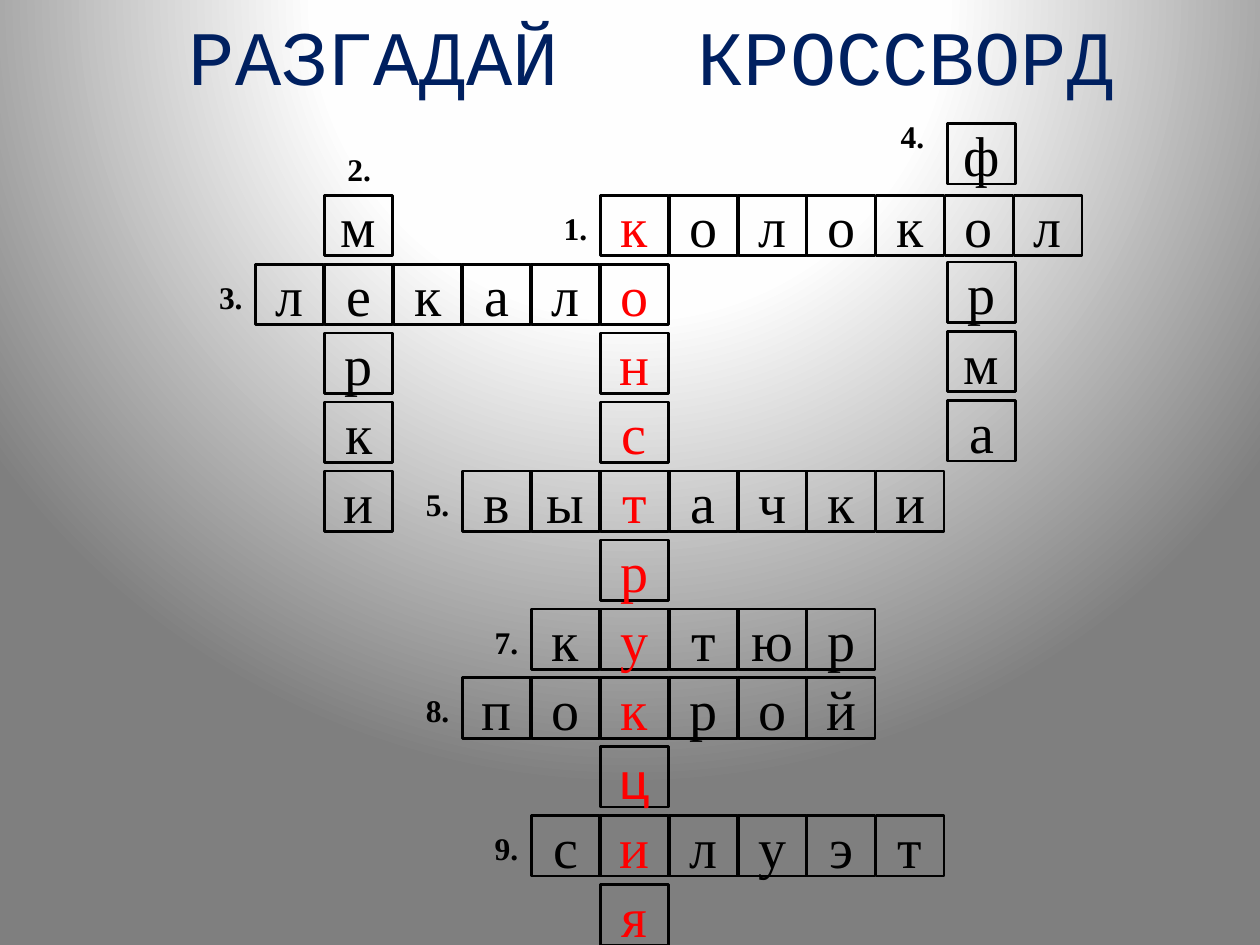
"""Build a crossword slide with a title, lettered cells and clue numbers."""
from pptx import Presentation, oxml, util as u
from pptx.dml.color import RGBColor
from pptx.enum import shapes, text

SERIF = "Times New Roman"
CELL_W, CELL_H = 0.54, 0.48
LEFT, TOP, PITCH = 2.03, 1.55, 5.47 / 10
KEYWORD, KEY_COL = "конструкция", 5
ACROSS = [
    ("1.", "колокол", 5, 0),
    ("3.", "лекало", 0, 1),
    ("5.", "вытачки", 3, 4),
    ("7.", "кутюр", 4, 6),
    ("8.", "покрой", 3, 7),
    ("9.", "силуэт", 4, 9),
]


def style(p, size, color, font=SERIF, bold=False):
    p.font.size = u.Pt(size)
    p.font.name = font
    p.font.bold = bold
    p.font.color.rgb = RGBColor.from_string(color)


def add_box(x, y, w, h):
    sp = s.shapes.add_textbox(u.Inches(x), u.Inches(y), u.Inches(w), u.Inches(h))
    sp.text_frame.word_wrap = True
    return sp.text_frame


prs = Presentation()
prs.slide_width, prs.slide_height = u.Inches(10), u.Inches(7.5)
s = prs.slides.add_slide(prs.slide_layouts[6])

s.background.fill.solid()
bg = s._element.cSld.bg.bgPr
stops = "".join(
    f'<a:gs pos="{pos * 1000}"><a:srgbClr val="{color}"/></a:gs>'
    for pos, color in [(0, "FFFFFF"), (40, "FEFEFE"), (100, "7F7F7F")]
)
bg.replace(bg[0], oxml.parse_xml(
    '<a:gradFill xmlns:a="http://schemas.openxmlformats.org/drawingml/2006/main" '
    f'rotWithShape="1"><a:gsLst>{stops}</a:gsLst><a:path path="circle">'
    '<a:fillToRect l="50000" t="-80000" r="50000" b="180000"/></a:path></a:gradFill>'
))

tf = add_box(0.67, 0, 9, 0.87)
tf.vertical_anchor = text.MSO_ANCHOR.MIDDLE
p = tf.paragraphs[0]
p.alignment = text.PP_ALIGN.CENTER
style(p, 44, "002060", "Courier New")
for part in ("РАЗГАДАЙ", " ", "КРОССВОРД"):
    r = p.add_run()
    r.text = part
    if part == " ":
        r._r.get_or_add_rPr().set("spc", "5280")

letters = {}
for number, word, col, row in ACROSS:
    for i, letter in enumerate(word):
        letters[col + i, row] = letter
for row, letter in enumerate("мерки"):
    letters[1, row] = letter
for row, letter in enumerate(KEYWORD):
    letters[KEY_COL, row] = letter

cells = [
    (LEFT + col * PITCH, TOP + row * PITCH, letter, "FF0000" if col == KEY_COL else "000000")
    for (col, row), letter in letters.items()
]
cells += [(7.52, 0.98 + i * 0.55, letter, "000000")
          for i, letter in enumerate("форма") if i != 1]

for x, y, letter, color in cells:
    sp = s.shapes.add_shape(shapes.MSO_SHAPE.RECTANGLE, u.Inches(x), u.Inches(y),
                            u.Inches(CELL_W), u.Inches(CELL_H))
    sp.shadow.inherit = False
    sp.fill.background()
    sp.line.color.rgb = RGBColor.from_string("000000")
    sp.line.width = u.Pt(1.5)
    tf = sp.text_frame
    tf.vertical_anchor = text.MSO_ANCHOR.MIDDLE
    p = tf.paragraphs[0]
    p.text = letter
    p.alignment = text.PP_ALIGN.CENTER
    style(p, 32, color, "Calibri" if letter == "ц" else SERIF)

numbers = [(number, LEFT + col * PITCH - 0.39, TOP + row * PITCH + 0.06)
           for number, word, col, row in ACROSS]
numbers += [("2.", 2.66, 1.14), ("4.", 7.05, 0.88)]
for number, x, y in numbers:
    tf = add_box(x, y, CELL_W, 0.4)
    tf.auto_size = text.MSO_AUTO_SIZE.SHAPE_TO_FIT_TEXT
    p = tf.paragraphs[0]
    p.text = number
    style(p, 18, "000000", bold=True)

prs.save("out.pptx")
